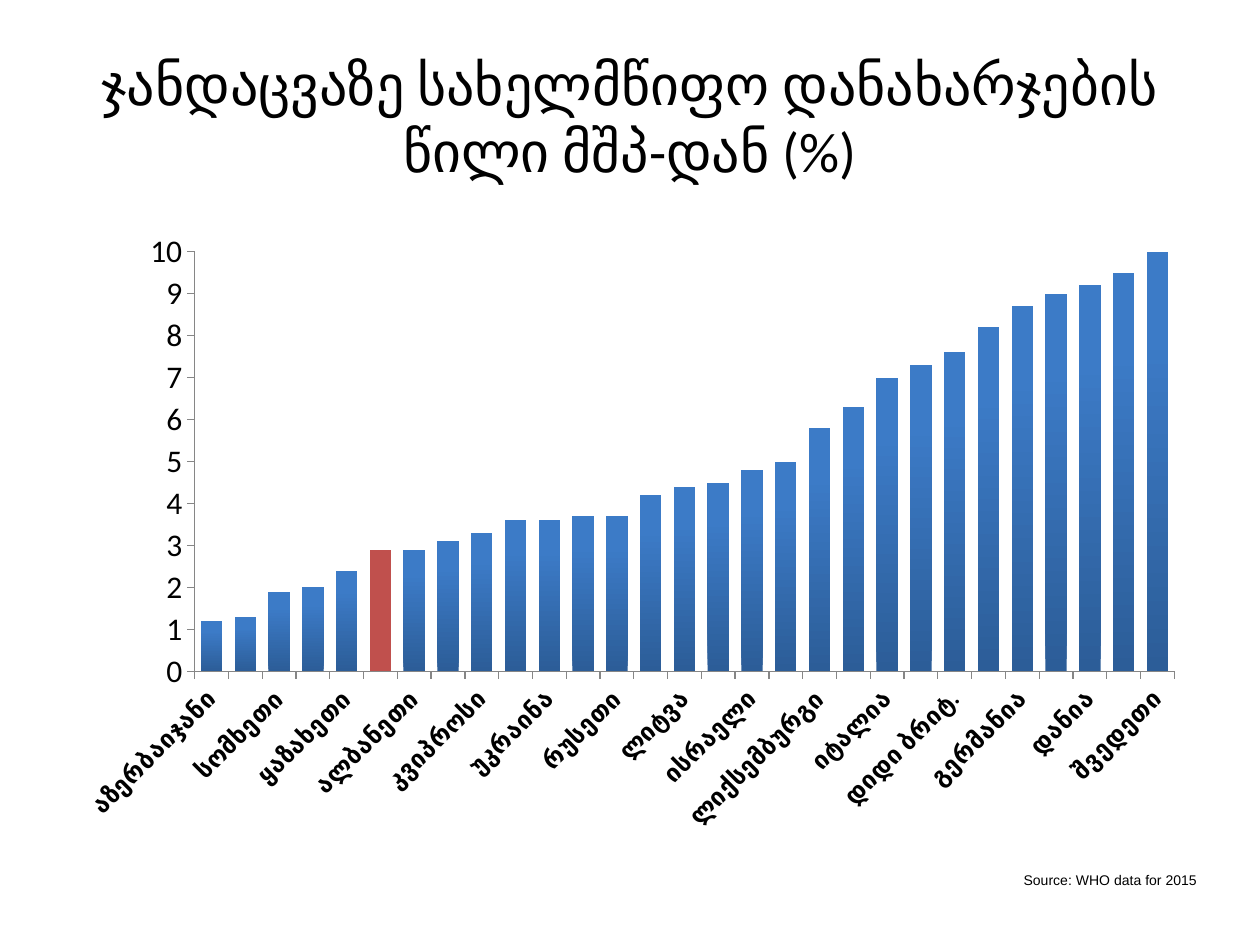
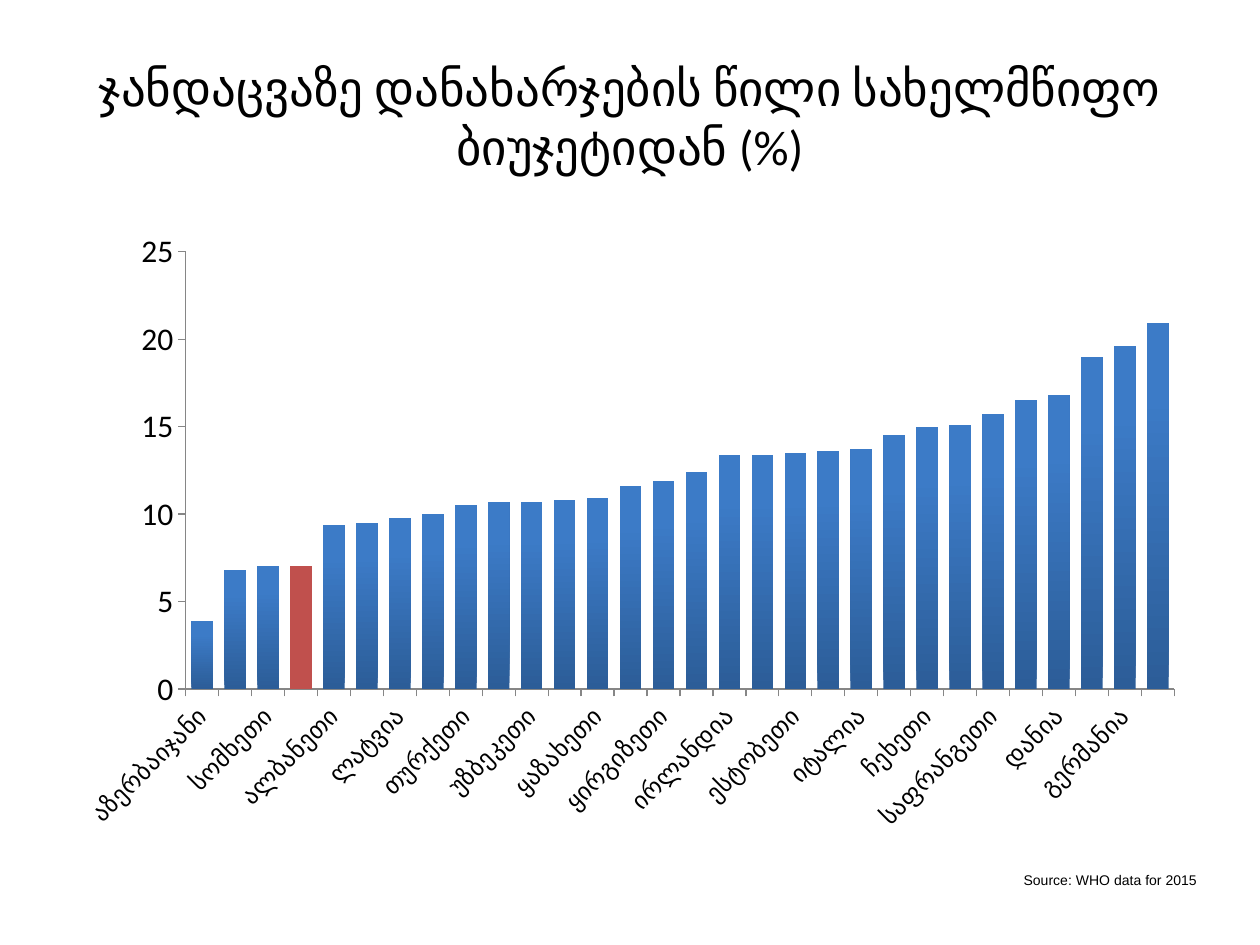
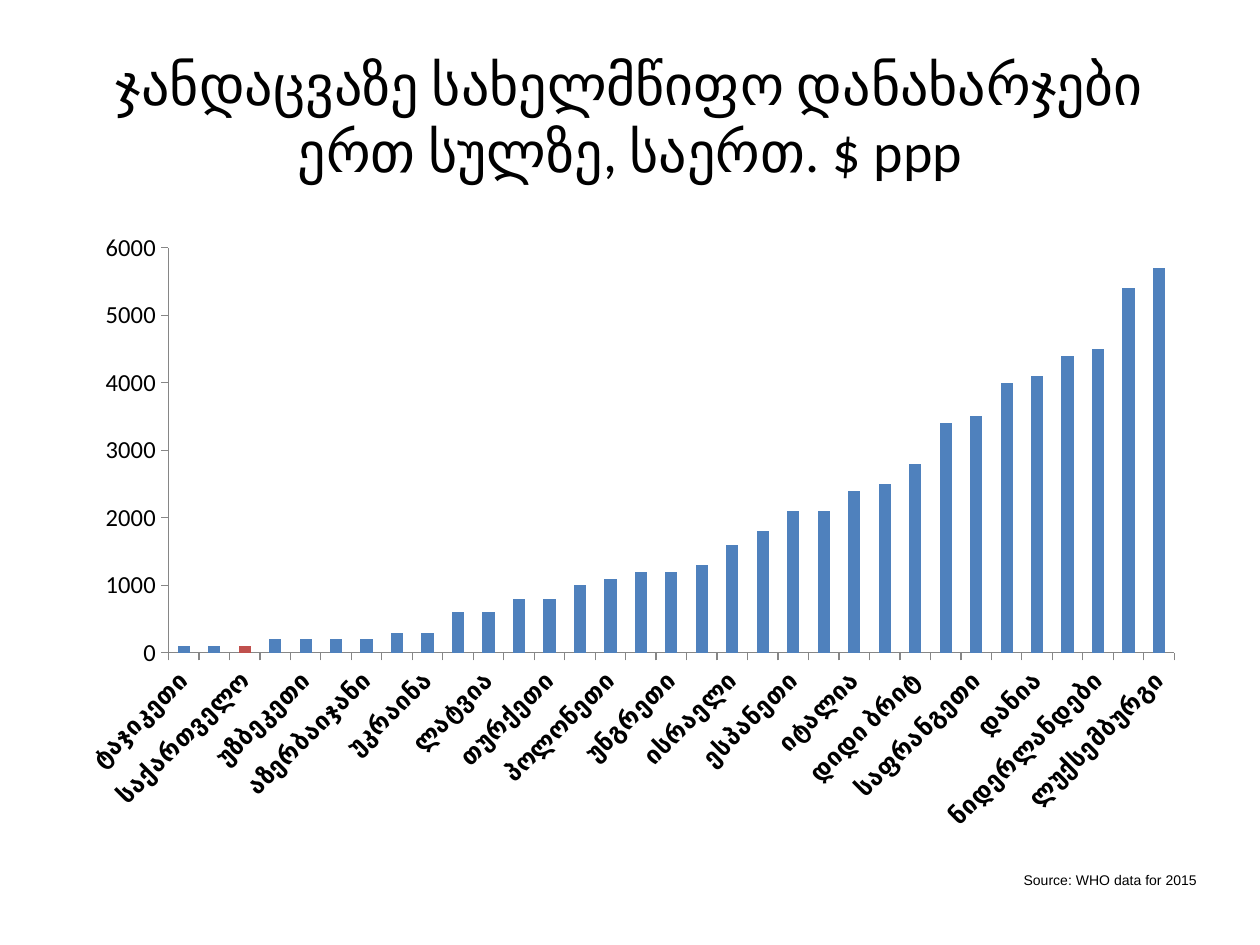
import dataclasses
from typing import Optional

import pptx
import pptx.chart.axis
import pptx.chart.data
import pptx.dml.color
import pptx.dml.fill
import pptx.enum.chart
import pptx.enum.text
import pptx.presentation
import pptx.slide
import pptx.text.text
import pptx.util

SLIDE_WIDTH = pptx.util.Inches(10)
SLIDE_HEIGHT = pptx.util.Inches(7.5)
TITLE_ONLY_LAYOUT = 5
HEADING_FONT = "Calibri"
SOURCE_FONT = "Arial"
SOURCE_TEXT = "Source: WHO data for 2015"
DIAGONAL_LABELS = "-2700000"
COLOURS = {
    "text": "000000",
    "axis": "868686",
    "column": "4F81BD",
    "gradient_bottom": "2C5D98",
    "gradient_top": "3C7BC7",
    "georgia": "C0504D",
}


@dataclasses.dataclass(frozen=True)
class Frame:
    """A rectangle given as shares of the slide's width and height."""

    left: float
    top: float
    width: float
    height: float

    def lengths(self) -> tuple[int, int, int, int]:
        return (
            int(self.left * SLIDE_WIDTH),
            int(self.top * SLIDE_HEIGHT),
            int(self.width * SLIDE_WIDTH),
            int(self.height * SLIDE_HEIGHT),
        )


TITLE_FRAME = Frame(0.05, 0.04, 0.9, 0.167)
CHART_FRAME = Frame(0.05, 0.233, 0.9, 0.66)
SOURCE_FRAME = Frame(0.704, 0.916, 0.256, 0.032)


@dataclasses.dataclass(frozen=True)
class SpendingSlide:
    title: str
    title_size: int
    countries: list[str]
    values: list[float]
    gap_width: int
    maximum: Optional[float] = None
    value_label_size: int = 18
    bold_countries: bool = True
    gradient: bool = True


SPENDING_SLIDES = [
    SpendingSlide(
        title="ჯანდაცვაზე სახელმწიფო დანახარჯების წილი მშპ-დან (%)",
        title_size=32,
        countries=[
            "აზერბაიჯანი", "თურქმენეთი", "სომხეთი", "ტაჯიკეთი", "ყაზახეთი",
            "საქართველო", "ალბანეთი", "უზბეკეთი", "კვიპროსი", "ყირგიზეთი",
            "უკრაინა", "ლატვია", "რუსეთი", "თურქეთი", "ლიტვა", "პოლონეთი",
            "ისრაელი", "ესტონეთი", "ლიქსემბურგი", "ჩეხეთი", "იტალია",
            "ვროკავშირი", "დიდი ბრიტ.", "ბელგია", "გერმანია", "საფრანგეთი",
            "დანია", "ნიდერლანდები", "შვედეთი",
        ],
        values=[
            1.2, 1.3, 1.9, 2, 2.4, 2.9, 2.9, 3.1, 3.3, 3.6, 3.6, 3.7, 3.7, 4.2, 4.4,
            4.5, 4.8, 5, 5.8, 6.3, 7, 7.3, 7.6, 8.2, 8.7, 9, 9.2, 9.5, 10,
        ],
        gap_width=58,
        maximum=10,
    ),
    SpendingSlide(
        title="ჯანდაცვაზე დანახარჯების წილი სახელმწიფო ბიუჯეტიდან (%)",
        title_size=28,
        countries=[
            "აზერბაიჯანი", "თურქმენეთი", "სომხეთი", "საქართველო", "ალბანეთი",
            "რუსეთი", "ლატვია", "საბერძნეთი", "თურქეთი", "პოლონეთი", "უზბეკეთი",
            "უკრაინა", "ყაზახეთი", "ისრაელი", "ყირგიზეთი", "ფინეთი", "ირლანდია",
            "ლიტვა", "ესტობეთი", "ლუქსემბურგი", "იტალია", "წსპანეთი", "ჩეხეთი",
            "ბელგია", "საფრანგეთი", "დიდი ბრიტ.", "დანია", "შვედეთი", "გერმანია",
            "ნიდერლანდები",
        ],
        values=[
            3.9, 6.8, 7, 7, 9.4, 9.5, 9.8, 10, 10.5, 10.7, 10.7, 10.8, 10.9, 11.6,
            11.9, 12.4, 13.4, 13.4, 13.5, 13.6, 13.7, 14.5, 15, 15.1, 15.7, 16.5,
            16.8, 19, 19.6, 20.9,
        ],
        gap_width=53,
        bold_countries=False,
    ),
    SpendingSlide(
        title="ჯანდაცვაზე სახელმწიფო დანახარჯები ერთ სულზე, საერთ. $ ppp",
        title_size=32,
        countries=[
            "ტაჯიკეთი", "ყირგიზეთი", "საქართველო", "სომხეთი", "უზბეკეთი",
            "თურქმენეთი", "აზერბაიჯანი", "მოლდოვა", "უკრაინა", "ყაზახეთი",
            "ლატვია", "საბერძნეთი", "თურქეთი", "რუსეთი", "პოლონეთი", "ლირვა",
            "უნგრეთი", "ესპანეთი", "ისრაელი", "ჩეხეთი", "ესპანეთი", "მალტა",
            "იტალია", "ირლანდია", "დიდი ბრიტ", "ბელგია", "საფრანგეთი",
            "გერმანია", "დანია", "შვედეთი", "ნიდერლანდები", "ნორვეგია",
            "ლუქსემბურგი",
        ],
        values=[
            100, 100, 100, 200, 200, 200, 200, 300, 300, 600, 600, 800, 800, 1000,
            1100, 1200, 1200, 1300, 1600, 1800, 2100, 2100, 2400, 2500, 2800, 3400,
            3500, 4000, 4100, 4400, 4500, 5400, 5700,
        ],
        gap_width=150,
        maximum=6000,
        value_label_size=14,
        gradient=False,
    ),
]


def colour(name: str) -> pptx.dml.color.RGBColor:
    return pptx.dml.color.RGBColor.from_string(COLOURS[name])


def format_font(font: pptx.text.text.Font, size: int, name: str = HEADING_FONT,
                bold: bool = False) -> None:
    font.name = name
    font.size = pptx.util.Pt(size)
    font.bold = bold
    font.color.rgb = colour("text")


def write_line(text_frame: pptx.text.text.TextFrame, text: str, size: int, name: str,
               alignment: pptx.enum.text.PP_ALIGN) -> None:
    text_frame.text = text
    paragraph = text_frame.paragraphs[0]
    paragraph.alignment = alignment
    format_font(paragraph.runs[0].font, size, name)


def add_title(slide: pptx.slide.Slide, text: str, size: int) -> None:
    title = slide.shapes.title
    title.left, title.top, title.width, title.height = TITLE_FRAME.lengths()
    title.text_frame.vertical_anchor = pptx.enum.text.MSO_ANCHOR.MIDDLE
    write_line(title.text_frame, text, size, HEADING_FONT, pptx.enum.text.PP_ALIGN.CENTER)


def add_source(slide: pptx.slide.Slide) -> None:
    text_frame = slide.shapes.add_textbox(*SOURCE_FRAME.lengths()).text_frame
    text_frame.word_wrap = True
    text_frame.auto_size = pptx.enum.text.MSO_AUTO_SIZE.SHAPE_TO_FIT_TEXT
    write_line(text_frame, SOURCE_TEXT, 8, SOURCE_FONT, pptx.enum.text.PP_ALIGN.RIGHT)


def format_axis(axis: pptx.chart.axis.CategoryAxis | pptx.chart.axis.ValueAxis,
                label_size: int, bold: bool = False) -> None:
    axis.has_major_gridlines = False
    axis.major_tick_mark = pptx.enum.chart.XL_TICK_MARK.OUTSIDE
    axis.minor_tick_mark = pptx.enum.chart.XL_TICK_MARK.NONE
    axis.format.line.color.rgb = colour("axis")
    axis.format.line.width = pptx.util.Pt(0.75)
    format_font(axis.tick_labels.font, label_size, bold=bold)


def fill_columns(fill: pptx.dml.fill.FillFormat, gradient: bool) -> None:
    if not gradient:
        fill.solid()
        fill.fore_color.rgb = colour("column")
        return
    fill.gradient()
    fill.gradient_angle = 90
    bottom, top = fill.gradient_stops
    bottom.position, top.position = 0, 0.8
    bottom.color.rgb = colour("gradient_bottom")
    top.color.rgb = colour("gradient_top")


def add_spending_chart(slide: pptx.slide.Slide, content: SpendingSlide) -> None:
    chart_data = pptx.chart.data.CategoryChartData()
    chart_data.categories = content.countries
    chart_data.add_series("Series 1", content.values)
    chart = slide.shapes.add_chart(
        pptx.enum.chart.XL_CHART_TYPE.COLUMN_CLUSTERED, *CHART_FRAME.lengths(), chart_data
    ).chart
    chart.has_title = False
    chart.has_legend = False
    format_font(chart.font, 18)

    format_axis(chart.category_axis, 14, content.bold_countries)
    label_body = chart.category_axis.tick_labels._element.txPr.bodyPr
    label_body.set("rot", DIAGONAL_LABELS)
    format_axis(chart.value_axis, content.value_label_size)
    if content.maximum is not None:
        chart.value_axis.maximum_scale = content.maximum

    plot = chart.plots[0]
    plot.gap_width = content.gap_width
    plot.vary_by_categories = False
    series = plot.series[0]
    series.invert_if_negative = False
    fill_columns(series.format.fill, content.gradient)
    georgia_fill = series.points[content.countries.index("საქართველო")].format.fill
    georgia_fill.solid()
    georgia_fill.fore_color.rgb = colour("georgia")


def add_spending_slide(presentation: pptx.presentation.Presentation,
                       content: SpendingSlide) -> None:
    slide = presentation.slides.add_slide(presentation.slide_layouts[TITLE_ONLY_LAYOUT])
    add_title(slide, content.title, content.title_size)
    add_spending_chart(slide, content)
    add_source(slide)


def main() -> None:
    presentation = pptx.Presentation()
    presentation.slide_width = SLIDE_WIDTH
    presentation.slide_height = SLIDE_HEIGHT
    for content in SPENDING_SLIDES:
        add_spending_slide(presentation, content)
    presentation.save("out.pptx")


if __name__ == "__main__":
    main()
